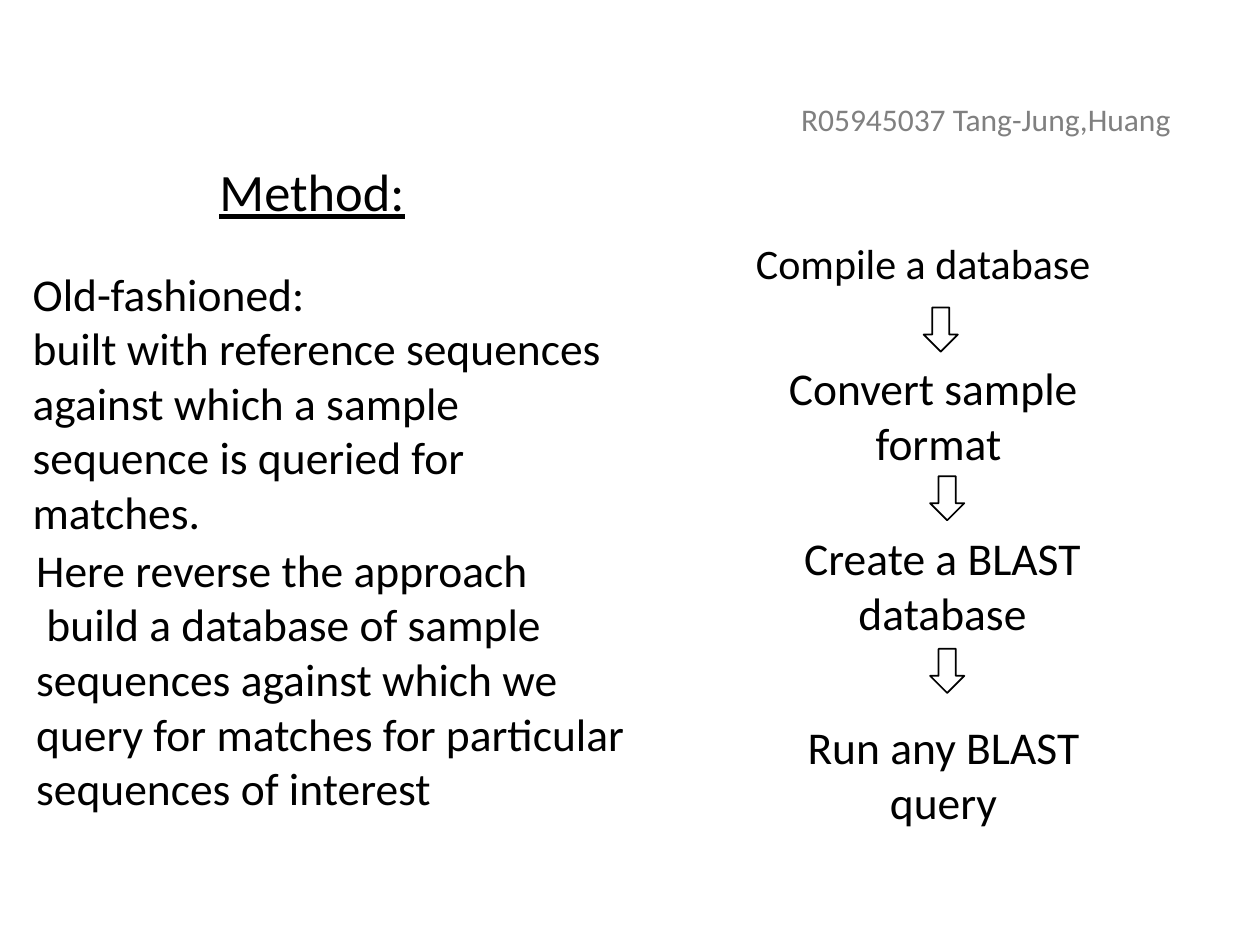
from pptx import Presentation
from pptx.dml.color import RGBColor
from pptx.enum.shapes import MSO_SHAPE
from pptx.enum.text import MSO_ANCHOR, MSO_AUTO_SIZE, PP_ALIGN
from pptx.util import Cm, Pt

INK = {"black": "000000", "gray": "808080"}


def write(shape, text, size=26, color="black", align=PP_ALIGN.LEFT,
          wrap=True, line=False):
    """Fill a shape with one paragraph per line of text."""
    frame = shape.text_frame
    frame.text = text
    frame.word_wrap = wrap
    frame.auto_size = MSO_AUTO_SIZE.NONE
    frame.vertical_anchor = MSO_ANCHOR.TOP
    for para in frame.paragraphs:
        para.alignment = align
        for run in para.runs:
            font = run.font
            font.name = "Calibri"
            font.size = Pt(size)
            font.underline = line
            font.color.rgb = RGBColor.from_string(INK[color])


deck = Presentation()
deck.slide_width, deck.slide_height = Cm(25.4), Cm(19.05)
slide = deck.slides.add_slide(deck.slide_layouts[5])
shapes = slide.shapes

# Heading and author
title = shapes.title
title.left, title.top = Cm(4.17), Cm(3.07)
title.width, title.height = Cm(4.27), Cm(1.55)
write(title, "Method:", size=30, wrap=False, line=True)

author = shapes.add_textbox(Cm(15.9), Cm(1.9), Cm(8.05), Cm(1.02))
write(author, "R05945037 Tang-Jung,Huang", size=18, color="gray", wrap=False)

# The two approaches, on the left
views = [
    (0.41, 5.23, "Old-fashioned:\nbuilt with reference sequences against "
     "which a sample sequence is queried for matches."),
    (0.48, 10.8, "Here reverse the approach\n build a database of sample "
     "sequences against which we query for matches for particular "
     "sequences of interest"),
]
for left, top, text in views:
    box = shapes.add_textbox(Cm(left), Cm(top), Cm(12.7), Cm(5.82))
    write(box, text)

# The workflow, on the right
first = shapes.add_textbox(Cm(14.99), Cm(4.67), Cm(9.91), Cm(1.27))
write(first, "Compile a database", size=24)

steps = [
    (14.45, 7.14, 8.94, "Convert sample \nformat"),
    (15.93, 10.57, 6.35, "Create a BLAST \ndatabase "),
    (16, 14.38, 6.25, "Run any BLAST \nquery "),
]
for left, top, width, text in steps:
    box = shapes.add_textbox(Cm(left), Cm(top), Cm(width), Cm(2.49))
    write(box, text, align=PP_ALIGN.CENTER)

for left, top in [(18.62, 6.2), (18.75, 9.6), (18.75, 13.08)]:
    arrow = shapes.add_shape(MSO_SHAPE.DOWN_ARROW,
                             Cm(left), Cm(top), Cm(0.69), Cm(0.89))
    arrow.shadow.inherit = False
    arrow.fill.background()
    arrow.line.color.rgb = RGBColor.from_string(INK["black"])
    arrow.line.width = Pt(1)

deck.save("out.pptx")
